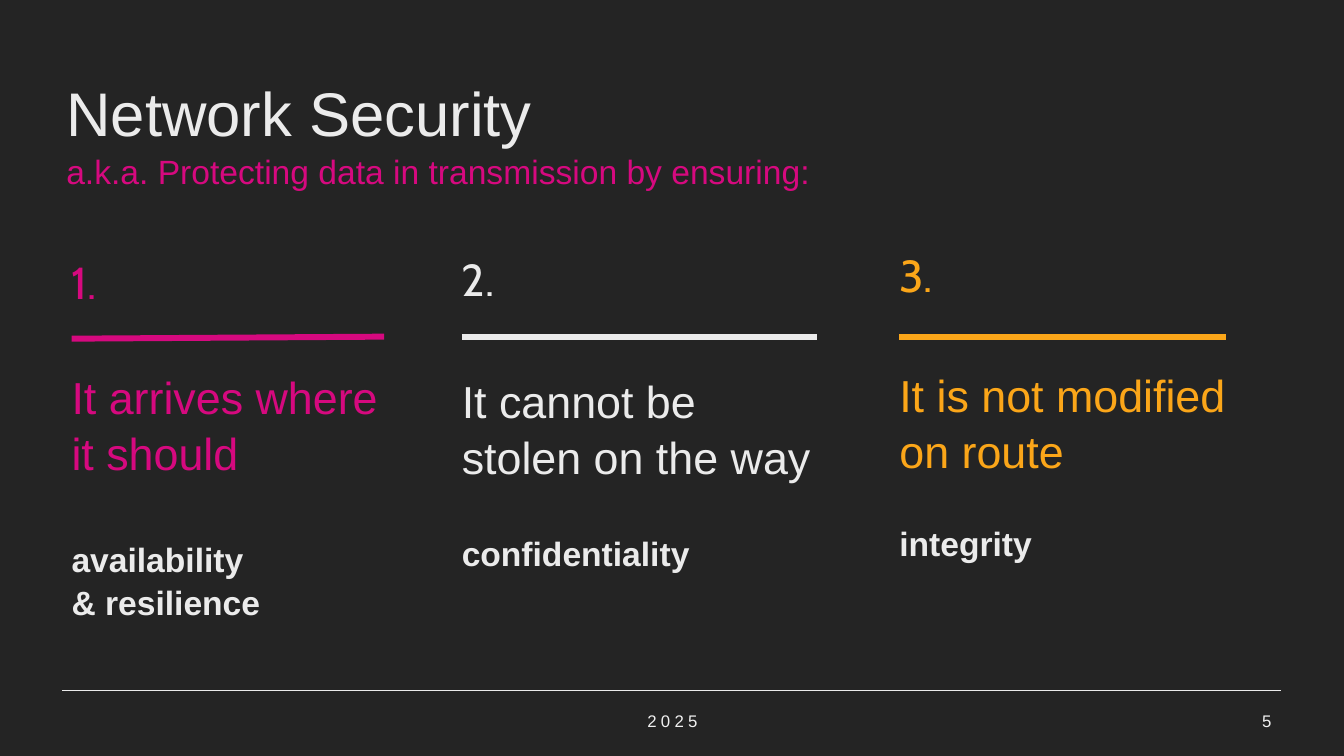
from dataclasses import dataclass

from lxml import etree
from pptx import Presentation
from pptx.dml.color import RGBColor
from pptx.enum.shapes import MSO_CONNECTOR
from pptx.enum.text import MSO_ANCHOR, PP_ALIGN
from pptx.oxml.ns import qn
from pptx.util import Inches, Pt

STRAIGHT = MSO_CONNECTOR.STRAIGHT
TOP, MIDDLE = MSO_ANCHOR.TOP, MSO_ANCHOR.MIDDLE
LEFT, CENTER, RIGHT = PP_ALIGN.LEFT, PP_ALIGN.CENTER, PP_ALIGN.RIGHT


@dataclass(frozen=True)
class Theme:
    background: str = "242424"
    light: str = "EBEBEB"
    footer: str = "F0F0F0"
    pink: str = "D6097F"
    orange: str = "FBA619"
    body_font: str = "Arial"
    number_font: str = "Cabin"
    title_size: int = 44
    statement_size: int = 32
    term_size: int = 24
    footer_size: int = 12
    line_spacing: float = 1.05


THEME = Theme()


def add_text_frame(slide, left, top, width, height, inset=0.0, anchor=TOP):
    box = slide.shapes.add_textbox(Inches(left), Inches(top), Inches(width), Inches(height))
    frame = box.text_frame
    frame.word_wrap = True
    frame.vertical_anchor = anchor
    frame.margin_left = frame.margin_right = Inches(inset)
    frame.margin_top = frame.margin_bottom = Inches(inset / 2)
    return frame


def write(frame, text, *, size, color, font=THEME.body_font, bold=False,
          align=LEFT, before=0, tracking=0, spacing=THEME.line_spacing):
    """Fill the first paragraph of the frame, or append another one."""
    first = frame.paragraphs[0]
    paragraph = frame.add_paragraph() if first.runs else first
    paragraph.alignment = align
    paragraph.line_spacing = spacing
    paragraph.space_before = Pt(before)
    run = paragraph.add_run()
    run.text = text
    run.font.name = font
    run.font.size = Pt(size)
    run.font.bold = bold
    run.font.color.rgb = RGBColor.from_string(color)
    if tracking:
        run.font._element.set("spc", str(tracking * 100))


def add_line(slide, start, end, color, weight):
    line = slide.shapes.add_connector(STRAIGHT, *(Inches(value) for value in (*start, *end)))
    line.line.color.rgb = RGBColor.from_string(color)
    line.line.width = Pt(weight)
    etree.SubElement(line._element.spPr, qn("a:effectLst"))


def add_title(slide):
    frame = add_text_frame(slide, 0.56, 0.66, 12.13, 1.53, inset=0.1)
    write(frame, "Network Security", size=THEME.title_size, color=THEME.light)
    write(frame, "a.k.a. Protecting data in transmission by ensuring:",
          size=THEME.term_size, color=THEME.pink)


def add_column(slide, number, statement, terms, *, color, left, width,
               number_top, rule_start, rule_length, text_top, term_gap):
    frame = add_text_frame(slide, left, number_top, 2.15, 0.71)
    write(frame, f"{number}.", size=THEME.statement_size, color=color, font=THEME.number_font)

    add_line(slide, (left, rule_start), (left + rule_length, 3.34), color, 4.25)

    frame = add_text_frame(slide, left, text_top, width, 2.1)
    write(frame, statement, size=THEME.statement_size, color=color)
    for index, term in enumerate(terms):
        write(frame, term, size=THEME.term_size, color=THEME.light, bold=True,
              before=0 if index else term_gap)


def add_footer(slide):
    add_line(slide, (0.62, 6.85), (12.71, 6.85), THEME.light, 0.5)
    for text, left, width, align, tracking in (
        ("2025", 4.42, 4.5, CENTER, 3),
        ("5", 9.71, 3, RIGHT, 0),
    ):
        frame = add_text_frame(slide, left, 6.95, width, 0.4, inset=0.1, anchor=MIDDLE)
        write(frame, text, size=THEME.footer_size, color=THEME.footer,
              align=align, tracking=tracking, spacing=1.0)


def main():
    presentation = Presentation()
    presentation.slide_width = Inches(13.33)
    presentation.slide_height = Inches(7.5)
    slide = presentation.slides.add_slide(presentation.slide_layouts[6])
    slide.background.fill.solid()
    slide.background.fill.fore_color.rgb = RGBColor.from_string(THEME.background)

    add_title(slide)

    # Three security goals
    add_column(slide, 1, "It arrives where it should", ["availability", "& resilience"],
               color=THEME.pink, left=0.71, width=3.06, number_top=2.5,
               rule_start=3.36, rule_length=3.1, text_top=3.64, term_gap=41)
    add_column(slide, 2, "It cannot be stolen on the way", ["confidentiality"],
               color=THEME.light, left=4.58, width=3.55, number_top=2.47,
               rule_start=3.34, rule_length=3.52, text_top=3.68, term_gap=34)
    add_column(slide, 3, "It is not modified on route", ["integrity"],
               color=THEME.orange, left=8.92, width=3.43, number_top=2.43,
               rule_start=3.34, rule_length=3.24, text_top=3.62, term_gap=31)

    add_footer(slide)
    presentation.save("out.pptx")


if __name__ == "__main__":
    main()
